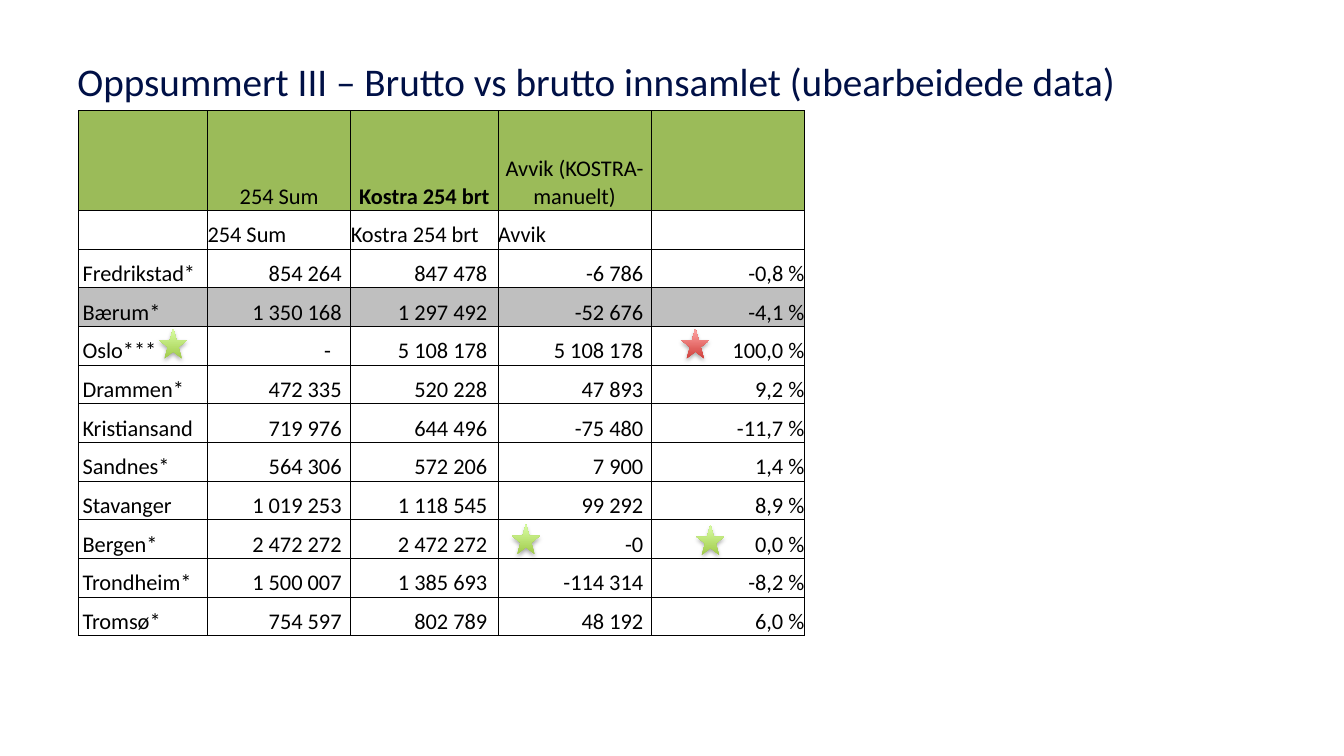
from dataclasses import dataclass

from lxml.etree import SubElement
from pptx import Presentation
from pptx.dml.color import RGBColor as RGB
from pptx.enum.shapes import MSO_SHAPE as Shape
from pptx.enum.text import MSO_ANCHOR as Anchor, PP_ALIGN as Align
from pptx.oxml.ns import qn
from pptx.util import Cm, Pt


@dataclass(frozen=True)
class Theme:
    font: str = "Calibri"
    title_size: int = 28
    table_size: int = 16
    title: str = "001046"
    ink: str = "000000"
    header: str = "9BBB59"
    highlight: str = "BFBFBF"
    green_star: tuple = ("A0CA4A", "DAFFA5")
    red_star: tuple = ("D1403C", "FFA6A5")


theme = Theme()


def add_text(paragraph, text, size, color, bold=False):
    run = paragraph.add_run()
    run.text = text
    run.font.name = theme.font
    run.font.size = Pt(size)
    run.font.bold = bold
    run.font.color.rgb = RGB.from_string(color)


def add_borders(cell):
    properties = cell._tc.get_or_add_tcPr()
    for side in ("lnL", "lnR", "lnT", "lnB"):
        line = SubElement(properties, qn(f"a:{side}"), w=str(Pt(0.5)))
        fill = SubElement(line, qn("a:solidFill"))
        SubElement(fill, qn("a:srgbClr"), val=theme.ink)


prs = Presentation()
prs.slide_width, prs.slide_height = Cm(33.87), Cm(19.05)
slide = prs.slides.add_slide(prs.slide_layouts[6])

# Title
title = slide.shapes.add_textbox(Cm(1.7), Cm(0.46), Cm(30.48), Cm(3.15)).text_frame
title.word_wrap = True
title.vertical_anchor = Anchor.MIDDLE
add_text(title.paragraphs[0],
         "Oppsummert III – Brutto vs brutto innsamlet (ubearbeidede data)",
         theme.title_size, theme.title)

# Table content: two heading rows, then one row per municipality
rows = [
    ("", "254 Sum", "Kostra 254 brt", "Avvik (KOSTRA-manuelt)", ""),
    ("", "254 Sum", "Kostra 254 brt", "Avvik", ""),
    ("Fredrikstad*", "854 264", "847 478", "-6 786", "-0,8 %"),
    ("Bærum*", "1 350 168", "1 297 492", "-52 676", "-4,1 %"),
    ("Oslo***", "-", "5 108 178", "5 108 178", "100,0 %"),
    ("Drammen*", "472 335", "520 228", "47 893", "9,2 %"),
    ("Kristiansand", "719 976", "644 496", "-75 480", "-11,7 %"),
    ("Sandnes*", "564 306", "572 206", "7 900", "1,4 %"),
    ("Stavanger", "1 019 253", "1 118 545", "99 292", "8,9 %"),
    ("Bergen*", "2 472 272", "2 472 272", "-0", "0,0 %"),
    ("Trondheim*", "1 500 007", "1 385 693", "-114 314", "-8,2 %"),
    ("Tromsø*", "754 597", "802 789", "48 192", "6,0 %"),
]
widths = (3.25, 3.61, 3.71, 3.86, 3.86)
right_margins = (0, 0.23, 0.27, 0.2, 0)
row_fills = {0: theme.header, 3: theme.highlight}
header_height, body_height = Cm(2.51), Cm(10.72)

# Table
deviations = slide.shapes.add_table(
    len(rows), len(widths), Cm(1.98), Cm(2.79),
    Cm(sum(widths)), header_height + body_height).table
deviations.first_row = deviations.horz_banding = False
for column, width in zip(deviations.columns, widths):
    column.width = Cm(width)

for r, row in enumerate(rows):
    deviations.rows[r].height = header_height if r == 0 else body_height // (len(rows) - 1)
    for c, value in enumerate(row):
        cell = deviations.cell(r, c)
        cell.margin_left = cell.margin_right = cell.margin_top = cell.margin_bottom = 0
        cell.vertical_anchor = Anchor.BOTTOM
        add_borders(cell)
        if r in row_fills:
            cell.fill.solid()
            cell.fill.fore_color.rgb = RGB.from_string(row_fills[r])
        else:
            cell.fill.background()

        paragraph = cell.text_frame.paragraphs[0]
        if r == 0:
            paragraph.alignment = Align.CENTER
        elif r == 1 or c == 0:
            paragraph.alignment = Align.LEFT
            cell.margin_left = Cm(0.1 if c == 0 else 0)
        else:
            paragraph.alignment = Align.RIGHT
            cell.margin_right = Cm(0.5 if value == "-" else right_margins[c])
        if value:
            add_text(paragraph, value, theme.table_size, theme.ink, bold=(r, c) == (0, 2))

# Stars marking the best and worst matches
stars = [
    (17.55, 13.23, theme.green_star),
    (12.9, 13.21, theme.green_star),
    (4.01, 8.28, theme.green_star),
    (17.17, 8.28, theme.red_star),
]
for left, top, colors in stars:
    star = slide.shapes.add_shape(Shape.STAR_5_POINT, Cm(left), Cm(top), Cm(0.71), Cm(0.76))
    star.line.fill.background()
    star.fill.gradient()
    star.fill.gradient_angle = 90
    for stop, position, color in zip(star.fill.gradient_stops, (0, 1), colors):
        stop.position = position
        stop.color.rgb = RGB.from_string(color)
    star.shadow.inherit = False
    effects = star._element.spPr.find(qn("a:effectLst"))
    shadow = SubElement(effects, qn("a:outerShdw"), blurRad=str(Pt(3.1)),
                        dist=str(Pt(1.8)), dir="5400000", rotWithShape="0")
    shade = SubElement(shadow, qn("a:srgbClr"), val=theme.ink)
    SubElement(shade, qn("a:alpha"), val="35000")

prs.save("out.pptx")
